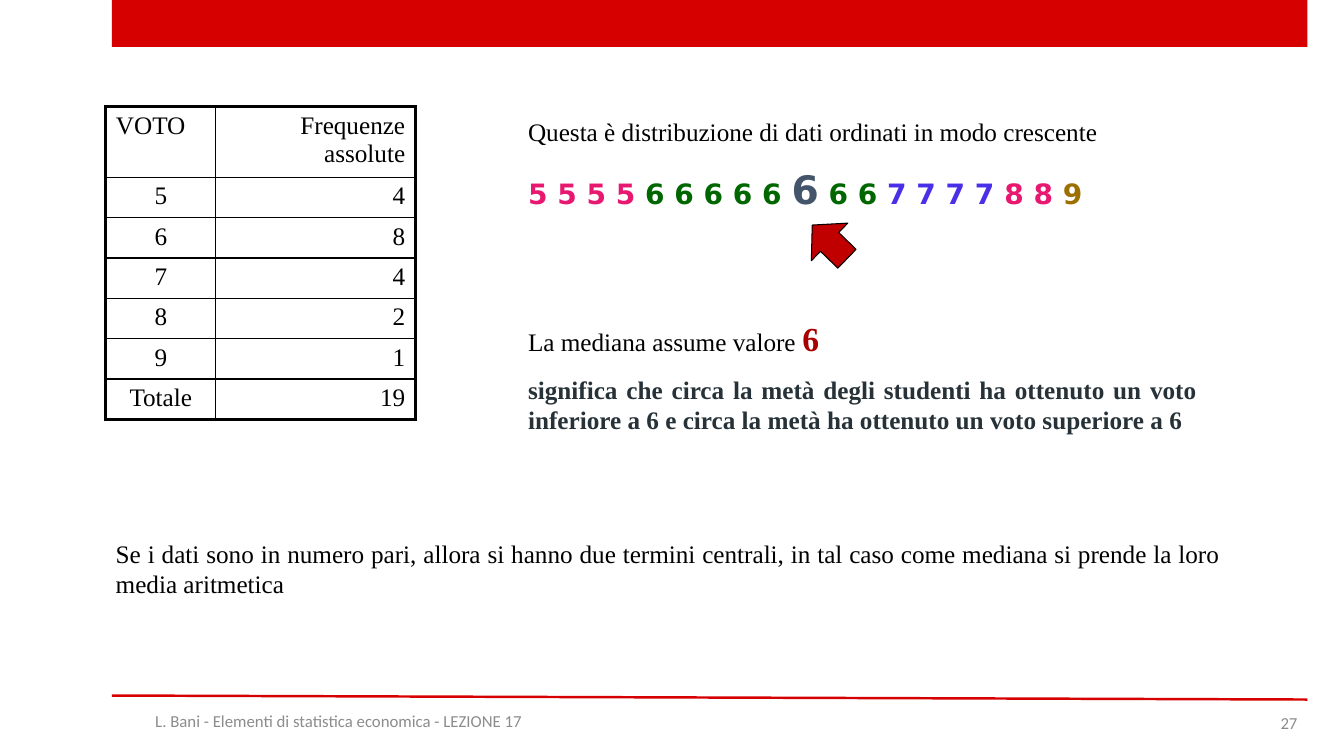
from dataclasses import dataclass

import pptx
import pptx.dml.color
import pptx.enum.shapes
import pptx.enum.text
import pptx.oxml
import pptx.oxml.ns
import pptx.util

Pt = pptx.util.Pt
Align = pptx.enum.text.PP_ALIGN
Shape = pptx.enum.shapes.MSO_SHAPE

# The slide is a grid of 160 columns by 90 rows of square units
COLS, ROWS = 160, 90
UNIT = pptx.util.Inches(1 / 12)
LEFT, EDGE, RIGHT, MID = 12.6, 13.33, 155.65, 61.68

INK = {
    "black": "000000", "white": "FFFFFF", "red": "D60000", "arrow": "C00000",
    "pink": "E81871", "green": "006600", "slate": "44546A", "blue": "492FE7",
    "gold": "9C6F00", "dark": "263238", "wine": "A80000", "grey": "8C8C8C",
}
SERIF, SANS, PLAIN = "Times New Roman", "DejaVu Sans", "Calibri"


@dataclass
class Span:
    text: str
    ink: str
    size: float
    bold: bool = False


@dataclass
class Note:
    box: tuple[float, float, float, float]
    spans: list[Span]
    face: str = SERIF
    align: Align = Align.LEFT
    wrap: bool = True
    grow: bool = True


def unit(num: float) -> int:
    return round(num * UNIT)


def color(name: str) -> pptx.dml.color.RGBColor:
    return pptx.dml.color.RGBColor.from_string(INK[name])


def style(font, span: Span) -> None:
    font.size = Pt(span.size)
    font.bold = span.bold
    font.color.rgb = color(span.ink)


def write(para, spans: list[Span], face: str, align: Align) -> None:
    para.alignment = align
    para.font.name = face
    if len(spans) == 1:
        style(para.font, spans[0])
    for span in spans:
        run = para.add_run()
        run.text = span.text
        if len(spans) > 1:
            style(run.font, span)
            run.font.name = face


def add_note(slide, note: Note) -> None:
    frame = slide.shapes.add_textbox(*map(unit, note.box)).text_frame
    frame.word_wrap = note.wrap
    if note.grow:
        frame.auto_size = pptx.enum.text.MSO_AUTO_SIZE.SHAPE_TO_FIT_TEXT
    else:
        frame.vertical_anchor = pptx.enum.text.MSO_ANCHOR.MIDDLE
    write(frame.paragraphs[0], note.spans, note.face, note.align)


def add_block(slide, kind: Shape, box: tuple, fill: str, line: str = ""):
    block = slide.shapes.add_shape(kind, *map(unit, box))
    block.shadow.inherit = False
    block.fill.solid()
    block.fill.fore_color.rgb = color(fill)
    if line:
        block.line.color.rgb = color(line)
        block.line.width = Pt(0.75)
    else:
        block.line.fill.background()
    return block


def add_rule(slide, ends: tuple, ink: str, width: float) -> None:
    rule = slide.shapes.add_connector(
        pptx.enum.shapes.MSO_CONNECTOR.STRAIGHT, *map(unit, ends))
    rule.line.color.rgb = color(ink)
    rule.line.width = Pt(width)
    props = rule._element.spPr
    props.append(pptx.oxml.parse_xml(
        f'<a:effectLst {pptx.oxml.ns.nsdecls("a")}/>'))


def add_edge(cell, side: str, width: float) -> None:
    props = cell._tc.get_or_add_tcPr()
    props.append(pptx.oxml.parse_xml(
        f'<a:ln{side} {pptx.oxml.ns.nsdecls("a")} w="{Pt(width)}">'
        f'<a:solidFill><a:srgbClr val="{INK["black"]}"/></a:solidFill>'
        f'</a:ln{side}>'))


def add_grid(slide, rows: list, wide: list, high: list) -> None:
    box = (LEFT, 12.72, sum(wide), sum(high))
    grid = slide.shapes.add_table(
        len(rows), len(wide), *map(unit, box)).table
    grid.first_row = grid.horz_banding = False
    for col, size in zip(grid.columns, wide):
        col.width = unit(size)
    for row, size in zip(grid.rows, high):
        row.height = unit(size)
    for r, row in enumerate(rows):
        for c, text in enumerate(row):
            cell = grid.cell(r, c)
            # The outer frame is heavier than the inner rules
            outer = {"L": c == 0, "R": c == len(wide) - 1,
                     "T": r == 0, "B": r == len(rows) - 1}
            for side, heavy in outer.items():
                add_edge(cell, side, 2.25 if heavy else 1)
            cell.fill.solid()
            cell.fill.fore_color.rgb = color("white")
            if c:
                align = Align.RIGHT
            else:
                align = Align.CENTER if r else Align.LEFT
            write(cell.text_frame.paragraphs[0],
                  [Span(text, "black", 18)], SERIF, align)


VOTES = [("VOTO", "Frequenze assolute"), ("5", "4"), ("6", "8"), ("7", "4"),
         ("8", "2"), ("9", "1"), ("Totale", "19")]

NOTES = [
    # Ordered data
    Note((MID, 13.2, 70.44, 4.8),
         [Span("Questa è distribuzione di dati ordinati in modo crescente",
               "black", 18)], wrap=False),
    Note((MID, 19.08, 72.12, 6.84),
         [Span("5 5 5 5 ", "pink", 20, True),
          Span("6 6 6 6 6 ", "green", 20, True),
          Span("6", "slate", 28, True),
          Span(" 6 6", "green", 20, True),
          Span(" 7 7 7 7 ", "blue", 20, True),
          Span("8 8 ", "pink", 20, True),
          Span("9", "gold", 20, True)], face=SANS, wrap=False),
    # Median and its meaning
    Note((MID, 37.3, 80, 6),
         [Span("La mediana assume valore ", "black", 18),
          Span("6", "wine", 24, True)], align=Align.JUSTIFY),
    Note((MID, 43.92, 82, 8.52),
         [Span("significa che circa la metà degli studenti ha ottenuto un "
               "voto inferiore a 6 e circa la metà ha ottenuto un voto "
               "superiore a 6", "dark", 18, True)], align=Align.JUSTIFY),
    # Even number of data
    Note((LEFT, 63.48, 133.92, 8.52),
         [Span("Se i dati sono in numero pari, allora si hanno due termini "
               "centrali, in tal caso come mediana si prende la loro media "
               "aritmetica", "black", 18)], align=Align.JUSTIFY),
    # Footer and page number
    Note((EDGE, 83.4, 54, 4.8),
         [Span("L. Bani - Elementi di statistica economica - LEZIONE 17",
               "grey", 12)], PLAIN, Align.CENTER, grow=False),
    Note((RIGHT - 36, 83.64, 36, 4.8), [Span("27", "grey", 12)],
         PLAIN, Align.RIGHT, grow=False),
]


def main() -> None:
    deck = pptx.Presentation()
    deck.slide_width, deck.slide_height = unit(COLS), unit(ROWS)
    slide = deck.slides.add_slide(deck.slide_layouts[6])

    # Top band and bottom rule
    add_block(slide, Shape.RECTANGLE, (EDGE, 0, RIGHT - EDGE, 5.6), "red")
    add_rule(slide, (EDGE, 82.8, RIGHT, 83.28), "red", 1.75)

    # Frequency table
    add_grid(slide, VOTES, [13.1, 23.75], [8.4] + [4.8] * 6)

    # Arrow to the middle value
    arrow = add_block(slide, Shape.DOWN_ARROW, (95.64, 25.92, 6.24, 5.76),
                      "arrow", "black")
    arrow.rotation = 134.1

    for note in NOTES:
        add_note(slide, note)
    deck.save("out.pptx")


if __name__ == "__main__":
    main()
